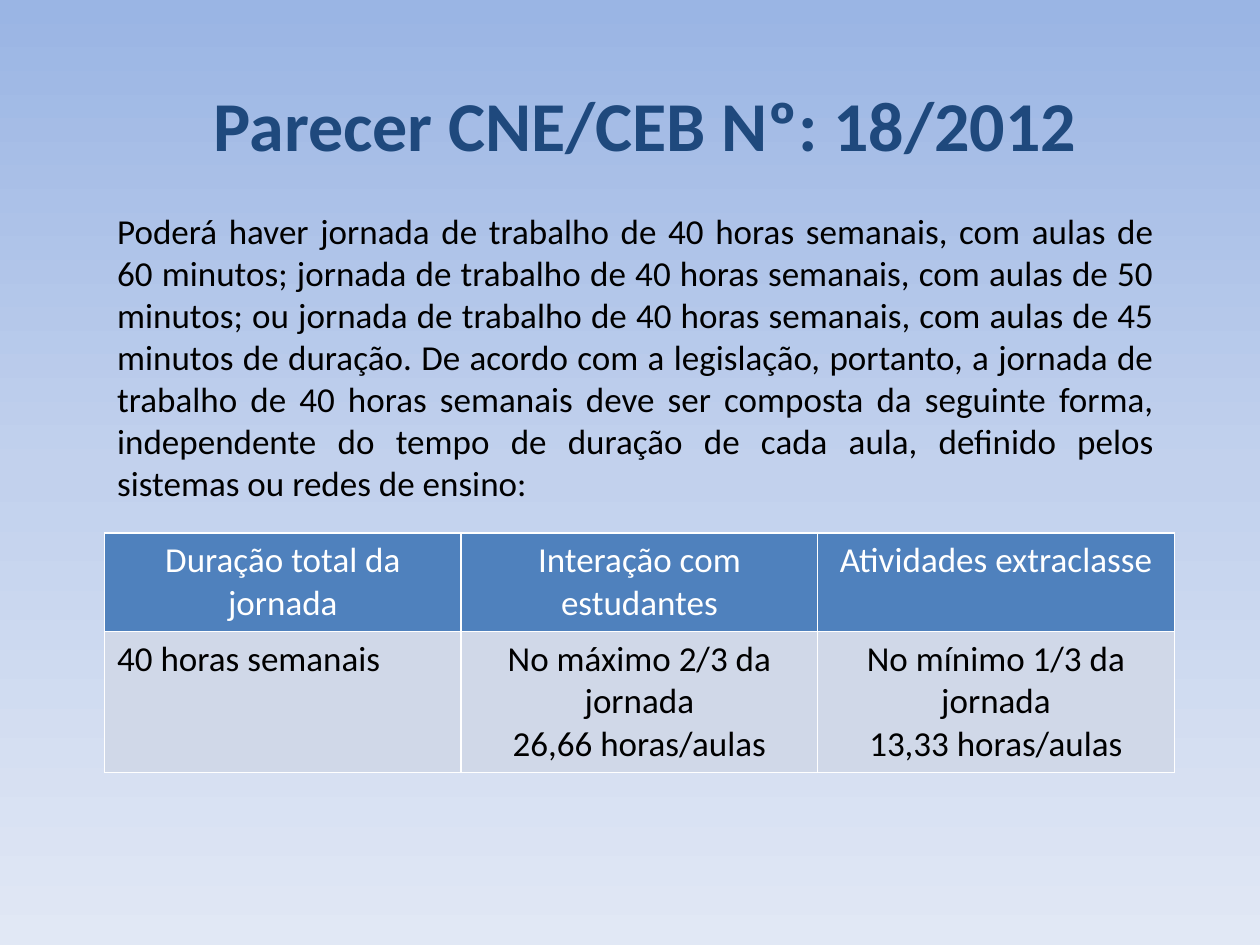
from copy import deepcopy

from pptx import Presentation
from pptx.dml.color import RGBColor
from pptx.enum.text import MSO_ANCHOR, MSO_AUTO_SIZE, PP_ALIGN
from pptx.oxml.ns import qn
from pptx.util import Inches, Pt
from lxml.etree import SubElement

TITLE = "Parecer CNE/CEB Nº: 18/2012"
BODY = (
    "Poderá haver jornada de trabalho de 40 horas semanais, com aulas de "
    "60 minutos; jornada de trabalho de 40 horas semanais, com aulas de 50 "
    "minutos; ou jornada de trabalho de 40 horas semanais, com aulas de 45 "
    "minutos de duração. De acordo com a legislação, portanto, a jornada de "
    "trabalho de 40 horas semanais deve ser composta da seguinte forma, "
    "independente do tempo de duração de cada aula, definido pelos "
    "sistemas ou redes de ensino:"
)
ROWS = [
    ["Duração total da jornada", "Interação com estudantes", "Atividades extraclasse"],
    [
        "40 horas semanais",
        "No máximo 2/3 da jornada\n26,66 horas/aulas",
        "No mínimo 1/3 da jornada\n13,33 horas/aulas",
    ],
]
ROW_HEIGHTS = [0.76, 1.1]
ROW_COLORS = [("4F81BD", "FFFFFF"), ("D0D8E8", "000000")]
COLUMN_WIDTH = 2.83
BACKGROUND_COLORS = ["9AB5E4", "C2D1ED", "E1E8F5"]


def color(value):
    return RGBColor.from_string(value)


def format_text(text_frame, size, text_color, alignment, bold=False):
    for paragraph in text_frame.paragraphs:
        paragraph.alignment = alignment
        for run in paragraph.runs:
            run.font.name = "Calibri"
            run.font.size = Pt(size)
            run.font.bold = bold
            run.font.color.rgb = color(text_color)


def set_background(slide, colors):
    fill = slide.background.fill
    fill.gradient()
    fill.gradient_angle = 270
    stop_list = slide.element.find(".//" + qn("a:gsLst"))
    stop_list.insert(1, deepcopy(stop_list[0]))
    for index, stop in enumerate(fill.gradient_stops):
        stop.position = index / (len(colors) - 1)
        stop.color.rgb = color(colors[index])


def fill_placeholder(shape, text, left, top, width, height):
    shape.left, shape.top = Inches(left), Inches(top)
    shape.width, shape.height = Inches(width), Inches(height)
    text_frame = shape.text_frame
    text_frame.text = text
    text_frame.auto_size = MSO_AUTO_SIZE.NONE
    text_frame.vertical_anchor = MSO_ANCHOR.TOP
    return text_frame


def add_title(slide):
    text_frame = fill_placeholder(slide.shapes.title, TITLE, 1.56, 0.6, 7.12, 0.77)
    text_frame.word_wrap = False
    format_text(text_frame, 40, "1F497D", PP_ALIGN.CENTER, bold=True)


def add_body(slide):
    text_frame = fill_placeholder(slide.placeholders[1], BODY, 0.83, 1.61, 8.43, 2.46)
    text_frame.word_wrap = True
    paragraph = text_frame.paragraphs[0]
    properties = paragraph._p.get_or_add_pPr()
    properties.set("marL", "0")
    properties.set("indent", "0")
    SubElement(properties, qn("a:buNone"))
    paragraph.space_before = Pt(0)
    format_text(text_frame, 20, "000000", PP_ALIGN.JUSTIFY)


def set_borders(cell, line_color, width):
    properties = cell._tc.get_or_add_tcPr()
    for side in ("L", "R", "T", "B"):
        line = SubElement(properties, qn("a:ln" + side), w=str(Pt(width)))
        solid_fill = SubElement(line, qn("a:solidFill"))
        SubElement(solid_fill, qn("a:srgbClr"), val=line_color)


def add_workload_table(slide):
    column_count = len(ROWS[0])
    table = slide.shapes.add_table(
        len(ROWS), column_count, Inches(0.83), Inches(4.23),
        Inches(COLUMN_WIDTH * column_count), Inches(sum(ROW_HEIGHTS)),
    ).table
    for column in table.columns:
        column.width = Inches(COLUMN_WIDTH)
    for row_index, texts in enumerate(ROWS):
        table.rows[row_index].height = Inches(ROW_HEIGHTS[row_index])
        fill_color, text_color = ROW_COLORS[row_index]
        for column_index, text in enumerate(texts):
            cell = table.cell(row_index, column_index)
            cell.text_frame.text = text
            is_row_label = row_index > 0 and column_index == 0
            alignment = PP_ALIGN.LEFT if is_row_label else PP_ALIGN.CENTER
            format_text(cell.text_frame, 20, text_color, alignment)
            set_borders(cell, "FFFFFF", 1)
            cell.fill.solid()
            cell.fill.fore_color.rgb = color(fill_color)


def main():
    presentation = Presentation()
    presentation.slide_width = Inches(10)
    presentation.slide_height = Inches(7.5)
    slide = presentation.slides.add_slide(presentation.slide_layouts[1])
    set_background(slide, BACKGROUND_COLORS)
    add_title(slide)
    add_body(slide)
    add_workload_table(slide)
    presentation.save("out.pptx")


if __name__ == "__main__":
    main()
